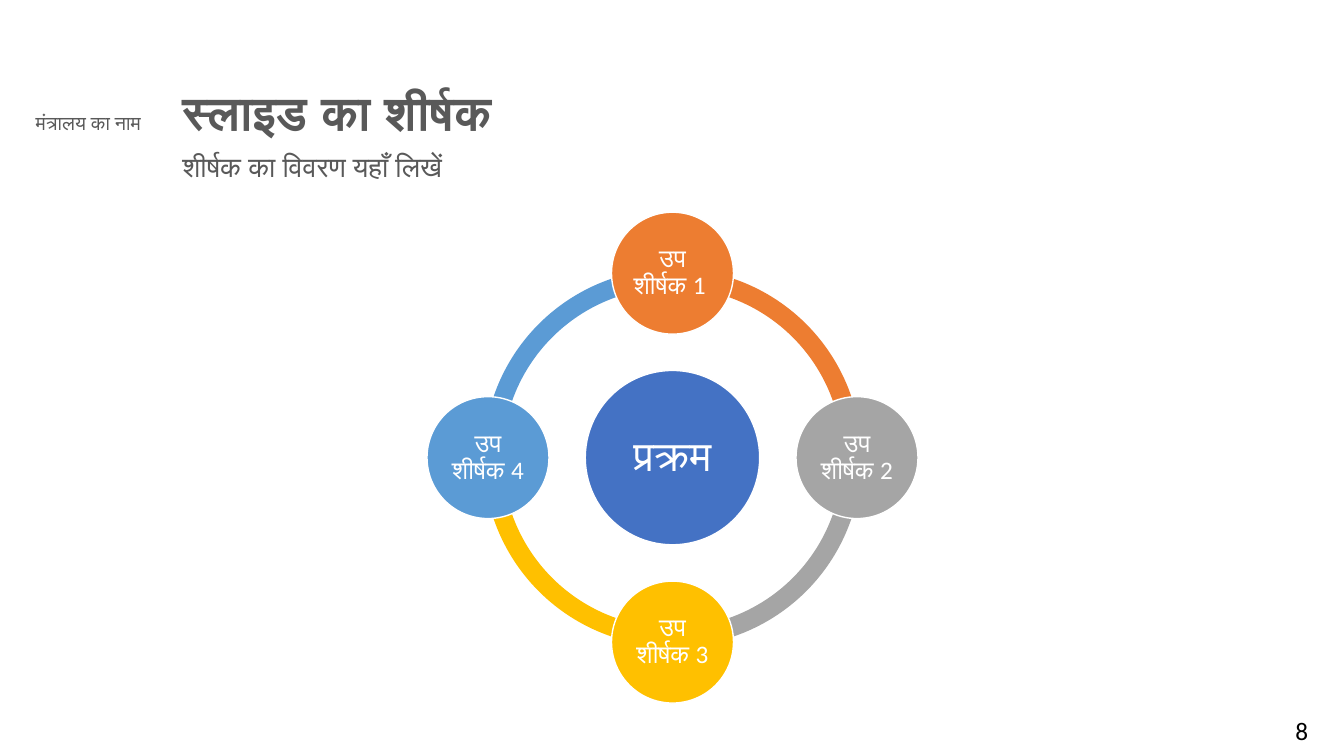
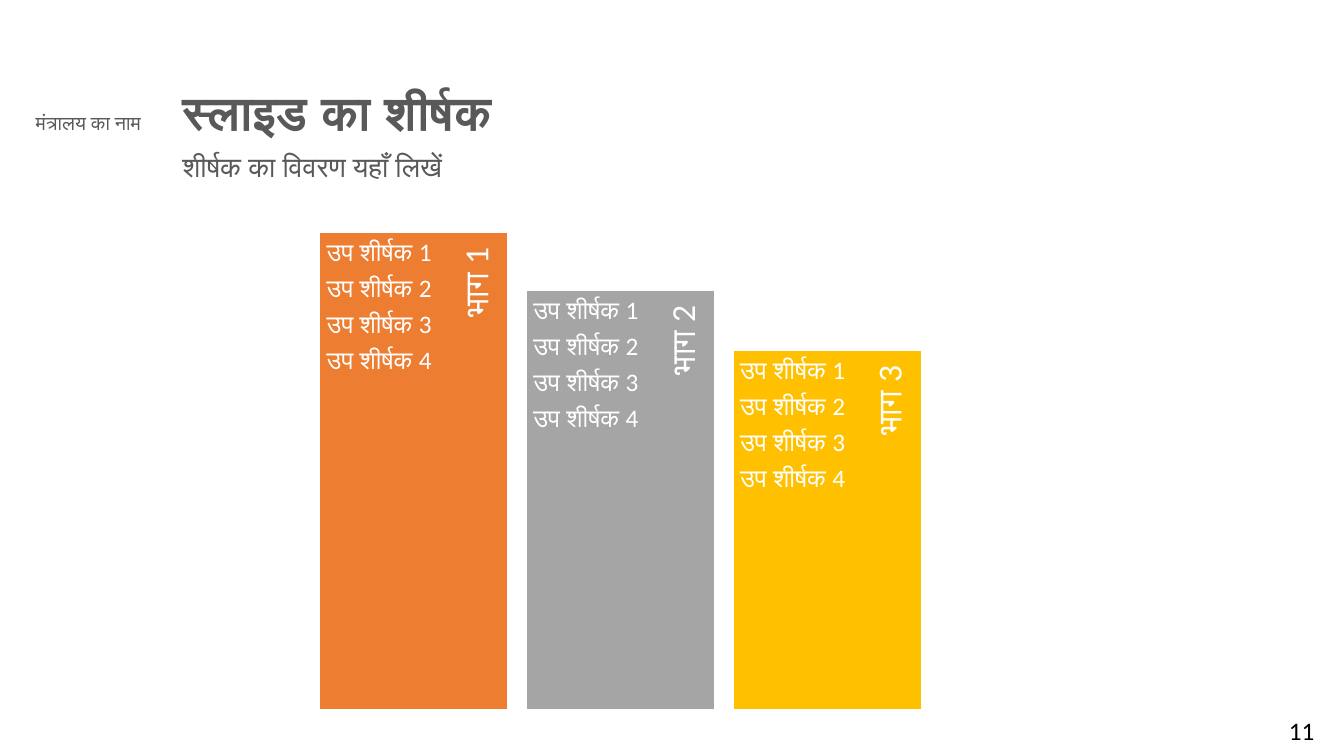
from math import cos, pi, sin

from pptx import Presentation
from pptx.dml.color import RGBColor
from pptx.enum.shapes import MSO_SHAPE
from pptx.enum.text import MSO_ANCHOR, PP_ALIGN
from pptx.util import Inches, Pt

COLORS = {
    "white": "FFFFFF",
    "black": "000000",
    "text": "595959",
    "blue": "4472C4",
    "orange": "ED7D31",
    "gray": "A5A5A5",
    "gold": "FFC000",
    "sky": "5B9BD5",
}
PARTS = ["orange", "gray", "gold", "sky"]
FONT = "Calibri"
AFTER = 0.35


def rgb(name):
    return RGBColor.from_string(COLORS[name])


def write(shape, text, size=18, color="white", bold=False, align=PP_ALIGN.LEFT,
          anchor=MSO_ANCHOR.TOP, pad=(0.1, 0.05, 0.1, 0.05), line=0.9, after=0):
    frame = shape.text_frame
    frame.word_wrap = True
    frame.vertical_anchor = anchor
    frame.margin_left, frame.margin_top, frame.margin_right, frame.margin_bottom = map(Inches, pad)
    for i, words in enumerate(text.split("\n")):
        para = frame.paragraphs[0] if i == 0 else frame.add_paragraph()
        para.alignment = align
        para.line_spacing = line
        para.space_after = Pt(round(size * after, 1))
        run = para.add_run()
        run.text = words
        run.font.name = FONT
        run.font.size = Pt(size)
        run.font.bold = bold
        run.font.color.rgb = rgb(color)


def label(slide, box, text, **style):
    shape = slide.shapes.add_textbox(*map(Inches, box))
    write(shape, text, **style)
    return shape


def block(slide, kind, box, fill, edge=True):
    shape = slide.shapes.add_shape(kind, *map(Inches, box))
    shape.shadow.inherit = False
    shape.fill.solid()
    shape.fill.fore_color.rgb = rgb(fill)
    if edge:
        shape.line.color.rgb = rgb("white")
        shape.line.width = Pt(1)
    else:
        shape.line.fill.background()
    return shape


def square(x, y, size):
    return x - size / 2, y - size / 2, size, size


def disc(slide, x, y, width, fill, text, size, inset):
    shape = block(slide, MSO_SHAPE.OVAL, square(x, y, width), fill)
    write(shape, text, size=size, align=PP_ALIGN.CENTER, anchor=MSO_ANCHOR.MIDDLE,
          pad=(inset,) * 4, after=AFTER)


def start(deck, number):
    slide = deck.slides.add_slide(deck.slide_layouts[6])
    label(slide, (1.71, 0.84, 9.61, 0.55), "स्लाइड का शीर्षक", size=34, color="text", bold=True)
    label(slide, (1.71, 1.47, 9.61, 0.63), "शीर्षक का विवरण यहाँ लिखें", size=20, color="text")
    label(slide, (-0.03, 1.08, 1.81, 0.65), "मंत्रालय का नाम", size=14, color="text",
          align=PP_ALIGN.CENTER)
    label(slide, (12.49, 7.05, 0.84, 0.45), str(number), color="black",
          align=PP_ALIGN.CENTER, line=1.0)
    return slide


def cycle(slide):
    x, y, radius = 6.67, 4.54, 1.83
    turn, full = 54, 216
    for i, color in enumerate(PARTS):
        arc = block(slide, MSO_SHAPE.BLOCK_ARC, square(x, y, 3.75), color, edge=False)
        begin = (162 + turn * i) % full
        for j, value in enumerate((begin, (begin + turn) % full, 0.05)):
            arc.adjustments[j] = value
    disc(slide, x, y, 1.73, "blue", "प्रक्रम", 30, 0.04)
    names = ["उप शीर्षक 1 ", "उप शीर्षक 2", "उप शीर्षक 3", "उप शीर्षक 4"]
    for i, (color, name) in enumerate(zip(PARTS, names)):
        angle = i * pi / 2
        disc(slide, x + radius * sin(angle), y - radius * cos(angle), 1.21, color, name, 18, 0.03)


def bars(slide):
    base, width, thick = 7.04, 1.87, 0.49
    items = "\n".join(f"उप शीर्षक {n}" for n in range(1, 5))
    for i, (top, color) in enumerate(zip((2.31, 2.88, 3.48), PARTS)):
        left, height = 3.17 + 2.05 * i, base - top
        block(slide, MSO_SHAPE.RECTANGLE, (left, top, width, height), color)
        span = 0.9 * height
        box = (left + 1.58 - span / 2, top + span / 2 - thick / 2, span, thick)
        title = label(slide, box, f"भाग {i + 1}", size=24, align=PP_ALIGN.RIGHT,
                      anchor=MSO_ANCHOR.MIDDLE, pad=(0.1, 0, 0.15, 0.03), after=AFTER)
        title.rotation = 270
        label(slide, (left, top, 1.33, height), items, pad=(0.07,) * 4, after=AFTER)


def main():
    deck = Presentation()
    deck.slide_width = Inches(13.33)
    deck.slide_height = Inches(7.5)
    cycle(start(deck, 8))
    bars(start(deck, 11))
    deck.save("out.pptx")


if __name__ == "__main__":
    main()
